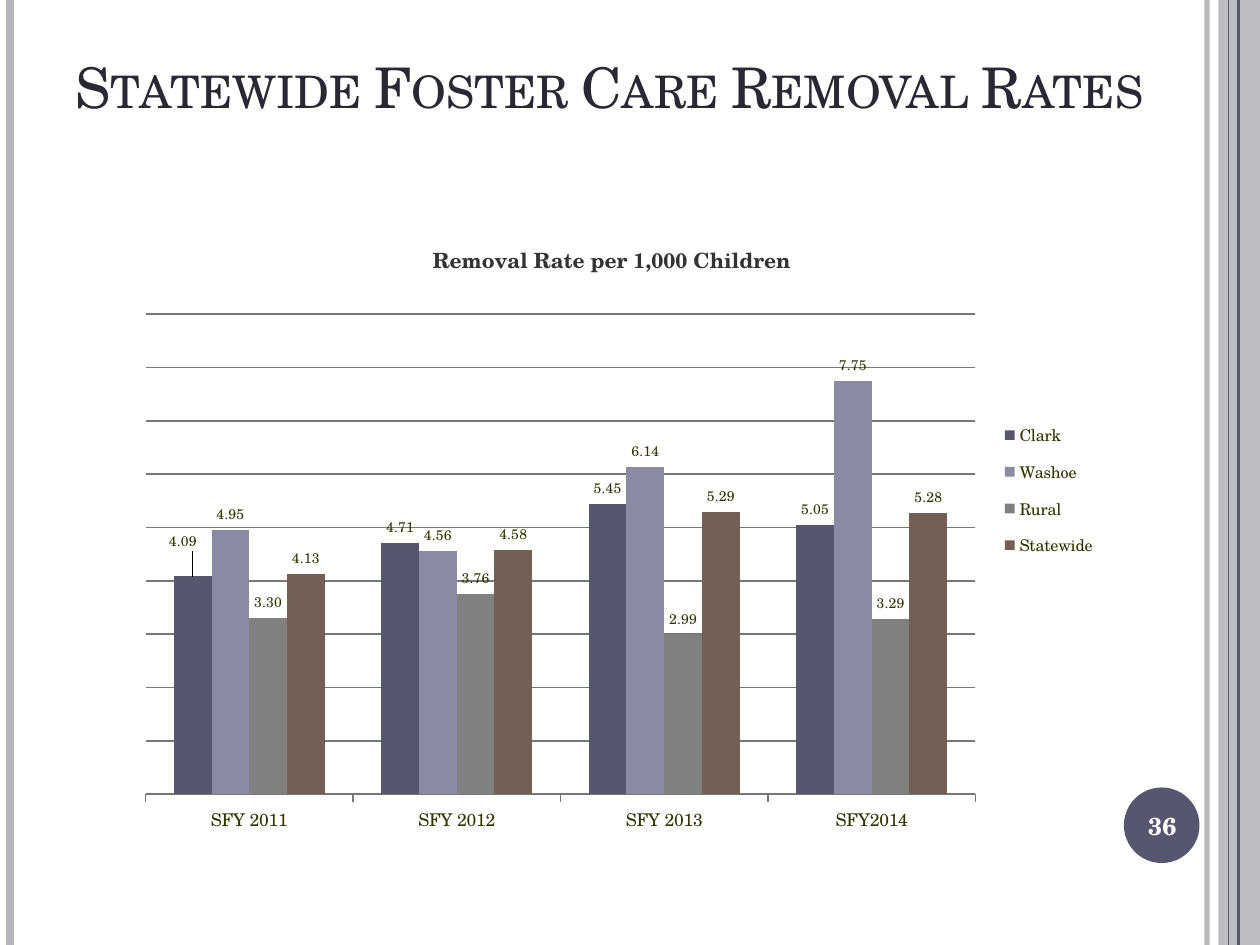
from dataclasses import dataclass

from lxml import etree
from pptx import Presentation
from pptx.chart.data import CategoryChartData
from pptx.dml.color import RGBColor
from pptx.enum.chart import (XL_CHART_TYPE, XL_LABEL_POSITION,
                             XL_LEGEND_POSITION, XL_TICK_LABEL_POSITION,
                             XL_TICK_MARK)
from pptx.enum.shapes import MSO_CONNECTOR, MSO_SHAPE
from pptx.enum.text import MSO_ANCHOR, MSO_AUTO_SIZE, PP_ALIGN
from pptx.oxml.ns import qn
from pptx.util import Inches, Pt

COLUMNS = XL_CHART_TYPE.COLUMN_CLUSTERED
OUTSIDE_END = XL_LABEL_POSITION.OUTSIDE_END
LEGEND_RIGHT = XL_LEGEND_POSITION.RIGHT
NO_LABELS = XL_TICK_LABEL_POSITION.NONE
TICK_NONE, TICK_OUT = XL_TICK_MARK.NONE, XL_TICK_MARK.OUTSIDE
STRAIGHT = MSO_CONNECTOR.STRAIGHT
RECTANGLE, OVAL = MSO_SHAPE.RECTANGLE, MSO_SHAPE.OVAL
BOTTOM, MIDDLE = MSO_ANCHOR.BOTTOM, MSO_ANCHOR.MIDDLE
LEFT, CENTER = PP_ALIGN.LEFT, PP_ALIGN.CENTER
NO_AUTOFIT = MSO_AUTO_SIZE.NONE


@dataclass(frozen=True)
class Theme:
    """Colours, font and type sizes of the slide."""
    font: str = "TeX Gyre Schola"
    ink: str = "292934"
    accent: str = "56566E"
    pale: str = "B4B4BA"
    white: str = "FFFFFF"
    chart_text: str = "333300"
    chart_title: str = "333333"
    grid: str = "777777"
    title_size: float = 32
    number_size: float = 14
    chart_title_size: float = 12
    axis_size: float = 10
    legend_size: float = 9.2
    label_size: float = 8


THEME = Theme()
CATEGORIES = ("SFY 2011", "SFY 2012", "SFY 2013", "SFY2014")
SERIES = (
    ("Clark", (4.09, 4.71, 5.45, 5.05), THEME.accent),
    ("Washoe", (4.95, 4.56, 6.14, 7.75), "8A8AA3"),
    ("Rural", (3.3, 3.76, 2.99, 3.29), "808080"),
    ("Statewide", (4.13, 4.58, 5.29, 5.28), "726056"),
)
RULES = (
    (9.58, THEME.pale, 3, 93),
    (0.08, THEME.pale, 4.5, 100),
    (9.83, THEME.accent, 1.5, 100),
    (9.75, THEME.accent, 0.75, 100),
)


def style_font(font, size, color, bold=False):
    """Apply the theme font with a size and colour."""
    font.name = THEME.font
    font.size = Pt(size)
    font.bold = bold
    font.color.rgb = RGBColor.from_string(color)


def set_opacity(shape, percent):
    """Make the shape's colour partly transparent."""
    for color in shape._element.spPr.iter(qn("a:srgbClr")):
        etree.SubElement(color, qn("a:alpha"), val=str(percent * 1000))


def add_rule(slide, left, color, width, opacity):
    """Draw a full-height vertical line."""
    rule = slide.shapes.add_connector(STRAIGHT, Inches(left), 0,
                                      Inches(left), Inches(7.5))
    rule.line.color.rgb = RGBColor.from_string(color)
    rule.line.width = Pt(width)
    set_opacity(rule, opacity)
    etree.SubElement(rule._element.spPr, qn("a:effectLst"))


def add_block(slide, preset, area, color, opacity=100):
    """Draw a filled shape without an outline."""
    block = slide.shapes.add_shape(preset, *map(Inches, area))
    block.shadow.inherit = False
    block.fill.solid()
    block.fill.fore_color.rgb = RGBColor.from_string(color)
    block.line.fill.background()
    set_opacity(block, opacity)


def write(shape, text, anchor, align, size, color, bold=False):
    """Write one styled run into a shape and return it."""
    frame = shape.text_frame
    frame.word_wrap = True
    frame.auto_size = NO_AUTOFIT
    frame.vertical_anchor = anchor
    para = frame.paragraphs[0]
    para.alignment = align
    span = para.add_run()
    span.text = text
    style_font(span.font, size, color, bold)
    return span


def add_title(slide, text):
    """Place the slide title in small capitals."""
    title = slide.shapes.title
    title.left, title.top = Inches(0.5), Inches(0.3)
    title.width, title.height = Inches(8.92), Inches(0.7)
    span = write(title, text, BOTTOM, LEFT, THEME.title_size, THEME.ink)
    span.font._element.set("cap", "small")


def make_layout(modes, **values):
    """Build a manual chart layout element."""
    layout = etree.Element(qn("c:layout"))
    manual = etree.SubElement(layout, qn("c:manualLayout"))
    for name, value in {**modes, **values}.items():
        etree.SubElement(manual, qn("c:" + name), val=str(value))
    return layout


def place(element, layout, before):
    """Put a layout ahead of the first sibling that must follow it."""
    for old in element.findall(qn("c:layout")):
        element.remove(old)
    followers = [child for child in element
                 if child.tag in [qn("c:" + name) for name in before]]
    followers[0].addprevious(layout)


def style_axes(chart):
    """Show category labels and gridlines, without value labels."""
    category, value = chart.category_axis, chart.value_axis
    category.major_tick_mark = TICK_OUT
    category.format.line.color.rgb = RGBColor.from_string(THEME.grid)
    style_font(category.tick_labels.font, THEME.axis_size, THEME.chart_text)
    value.minimum_scale, value.maximum_scale, value.major_unit = 0, 9, 1
    value.major_tick_mark = TICK_NONE
    value.tick_label_position = NO_LABELS
    value.format.line.fill.background()
    grid = value.major_gridlines.format.line
    grid.color.rgb = RGBColor.from_string(THEME.grid)
    grid.width = Pt(1)


def style_series(series, color):
    """Colour a series and label its columns."""
    series.format.fill.solid()
    series.format.fill.fore_color.rgb = RGBColor.from_string(color)
    labels = series.data_labels
    labels.show_value = True
    labels.position = OUTSIDE_END
    labels.number_format = "0.00"
    labels.number_format_is_linked = False
    style_font(labels.font, THEME.label_size, THEME.chart_text)


def nudge_first_label(series, x, y):
    """Shift the label of the first column."""
    label = series.points[0].data_label
    style_font(label.font, THEME.label_size, THEME.chart_text)
    label.position = OUTSIDE_END
    element = series._element.find(".//" + qn("c:dLbl"))
    place(element, make_layout({}, x=x, y=y), ("tx", "numFmt", "spPr", "txPr"))


def add_rate_chart(slide, title):
    """Add the clustered column chart of removal rates."""
    data = CategoryChartData(number_format="0.00")
    data.categories = CATEGORIES
    for name, values, _ in SERIES:
        data.add_series(name, values)
    area = map(Inches, (1, 1.58, 7.75, 5.08))
    chart = slide.shapes.add_chart(COLUMNS, *area, data).chart
    style_font(chart.font, THEME.axis_size, THEME.chart_text)

    edges = {"xMode": "edge", "yMode": "edge"}
    chart.has_title = True
    span = chart.chart_title.text_frame.paragraphs[0].add_run()
    span.text = title
    style_font(span.font, THEME.chart_title_size, THEME.chart_title, True)
    place(chart.chart_title._element, make_layout(edges, x=0.31, y=0.06),
          ("overlay", "spPr", "txPr"))

    chart.has_legend = True
    chart.legend.position = LEGEND_RIGHT
    chart.legend.include_in_layout = False
    style_font(chart.legend.font, THEME.legend_size, THEME.chart_text)
    place(chart.legend._element,
          make_layout(edges, x=0.89, y=0.33, w=0.11, h=0.25),
          ("overlay", "spPr", "txPr"))

    plot = chart.plots[0]
    plot.gap_width, plot.overlap = 150, 0
    plot.vary_by_categories = False
    place(plot._element.getparent(),
          make_layout({"layoutTarget": "inner", **edges},
                      x=0.02, y=0.18, w=0.85, h=0.75), ("barChart",))
    style_axes(chart)
    for series, (_, _, color) in zip(plot.series, SERIES):
        style_series(series, color)
    nudge_first_label(plot.series[0], -0.01, -0.03)


def main():
    """Build and save the slide."""
    deck = Presentation()
    deck.slide_width, deck.slide_height = Inches(10), Inches(7.5)
    slide = deck.slides.add_slide(deck.slide_layouts[5])
    add_block(slide, RECTANGLE, (9.67, 0, 0.33, 7.5), THEME.pale, 87)
    for rule in RULES:
        add_rule(slide, *rule)
    add_block(slide, OVAL, (8.92, 6.25, 0.6, 0.6), THEME.accent)
    add_title(slide, "Statewide Foster Care Removal Rates")
    add_rate_chart(slide, "Removal Rate per 1,000 Children")
    area = map(Inches, (8.89, 6.27, 0.67, 0.57))
    write(slide.shapes.add_textbox(*area), "36", MIDDLE, CENTER,
          THEME.number_size, THEME.white, True)
    deck.save("out.pptx")


if __name__ == "__main__":
    main()
